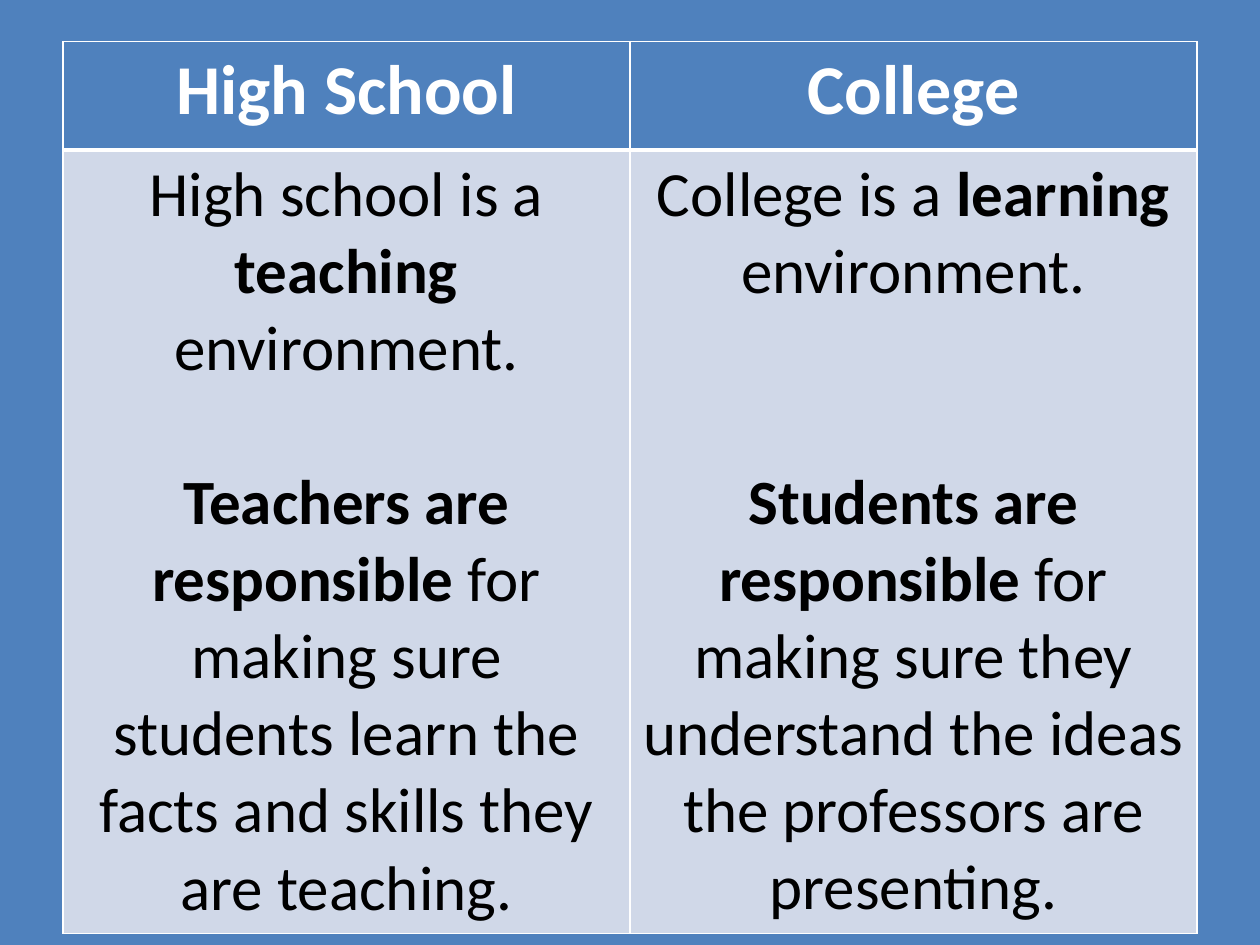
import pptx
import pptx.util
import pptx.dml.color
import pptx.enum.text
import pptx.oxml
import pptx.oxml.ns

Inches = pptx.util.Inches
Pt = pptx.util.Pt
RGBColor = pptx.dml.color.RGBColor

BLUE = RGBColor(0x4F, 0x81, 0xBD)
PALE = RGBColor(0xD0, 0xD8, 0xE8)
WHITE = RGBColor(0xFF, 0xFF, 0xFF)
BLACK = RGBColor(0x00, 0x00, 0x00)
FONT = "Calibri"
BODY_LINE = 44  # points taken by one line of body text

HEADINGS = ["High School", "College"]
# Each paragraph is a list of (text, bold) runs
ENVIRONMENTS = [
    [("High school is a ", False), ("teaching", True), (" environment.", False)],
    [("College is a ", False), ("learning", True), (" environment.", False)],
]
RESPONSIBILITIES = [
    [("Teachers are responsible ", True),
     ("for making sure students learn the facts and skills they are teaching.", False)],
    [("Students are responsible ", True),
     ("for making sure they understand the ideas the professors are presenting.", False)],
]
GAP_LINES = [1, 2]  # lines left free between the two paragraphs


def add_text(paragraph, text, size=36, bold=False, color=BLACK):
    paragraph.alignment = pptx.enum.text.PP_ALIGN.CENTER
    run = paragraph.add_run()
    run.text = text
    run.font.name = FONT
    run.font.size = Pt(size)
    run.font.bold = bold
    run.font.color.rgb = color


def style_cell(cell, fill, top=1, bottom=1):
    cell.fill.solid()
    cell.fill.fore_color.rgb = fill
    properties = cell._tc.get_or_add_tcPr()
    # Borders come before the fill, in the order left, right, top, bottom
    widths = {"lnL": 1, "lnR": 1, "lnT": top, "lnB": bottom}
    for position, (side, width) in enumerate(widths.items()):
        border = pptx.oxml.parse_xml(
            f'<a:{side} {pptx.oxml.ns.nsdecls("a")} w="{Pt(width)}">'
            f'<a:solidFill><a:srgbClr val="{WHITE}"/></a:solidFill></a:{side}>')
        properties.insert(position, border)


def add_comparison(slide, left, top, width, heights):
    comparison = slide.shapes.add_table(
        2, len(HEADINGS), left, top, width, sum(heights)).table
    for row, height in zip(comparison.rows, heights):
        row.height = height

    for column, heading in enumerate(HEADINGS):
        # Heading row
        heading_cell = comparison.cell(0, column)
        style_cell(heading_cell, BLUE, bottom=3)
        add_text(heading_cell.text_frame.paragraphs[0], heading,
                 size=40, bold=True, color=WHITE)

        # Body row
        body_cell = comparison.cell(1, column)
        style_cell(body_cell, PALE, top=3)
        body_cell.vertical_anchor = pptx.enum.text.MSO_ANCHOR.MIDDLE
        environment = body_cell.text_frame.paragraphs[0]
        responsibility = body_cell.text_frame.add_paragraph()
        responsibility.space_before = Pt(BODY_LINE * GAP_LINES[column])
        for paragraph, runs in ((environment, ENVIRONMENTS[column]),
                                (responsibility, RESPONSIBILITIES[column])):
            for text, bold in runs:
                add_text(paragraph, text, bold=bold)


def main():
    deck = pptx.Presentation()
    deck.slide_width = Inches(10)
    deck.slide_height = Inches(7.5)
    slide = deck.slides.add_slide(deck.slide_layouts[6])
    slide.background.fill.solid()
    slide.background.fill.fore_color.rgb = BLUE
    add_comparison(slide, Inches(0.5), Inches(0.33), Inches(9),
                   [Inches(0.86), Inches(6.1)])
    deck.save("out.pptx")


if __name__ == "__main__":
    main()
